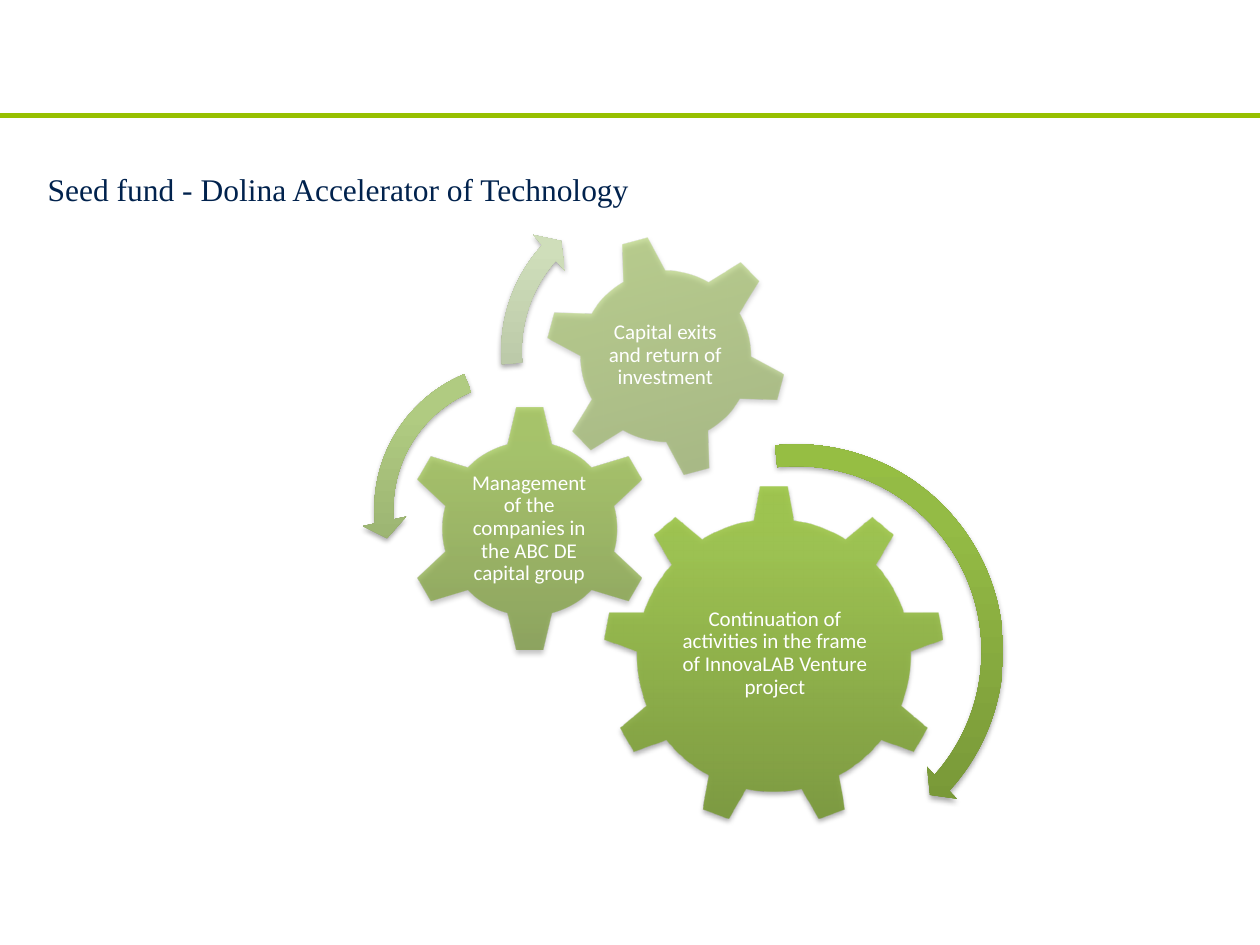
import pptx
import pptx.dml.color
import pptx.enum.shapes
import pptx.enum.text
import pptx.oxml
import pptx.oxml.ns
import pptx.util

Inches = pptx.util.Inches
Pt = pptx.util.Pt
SHAPE = pptx.enum.shapes.MSO_SHAPE
ALIGN = pptx.enum.text.PP_ALIGN
ANCHOR = pptx.enum.text.MSO_ANCHOR
NS = pptx.oxml.ns.nsdecls("a")


def rgb(value):
    return pptx.dml.color.RGBColor.from_string(value)


class Deck:
    TITLE = {"name": "Times New Roman", "size": Pt(18)}
    LABEL = {"name": "Calibri", "size": Pt(12)}
    NAVY, WHITE, GREEN = "01224D", "FFFFFF", "97C000"
    GEAR_COLORS = ("779737", "9BC348", "9DC746")

    def __init__(self, prs):
        self.s = prs.slides.add_slide(prs.slide_layouts[6])

    def rule(self, y):
        c = self.s.shapes.add_connector(
            pptx.enum.shapes.MSO_CONNECTOR.STRAIGHT, 0, Inches(y), Inches(10), Inches(y))
        c.line.color.rgb = rgb(self.GREEN)
        c.line.width = Pt(2.75)
        c._element.spPr.append(pptx.oxml.parse_xml(f"<a:effectLst {NS}/>"))

    def text(self, box, words, font, color, frame=None, para=None):
        tf = self.s.shapes.add_textbox(*map(Inches, box)).text_frame
        tf.word_wrap = True
        p = tf.paragraphs[0]
        r = p.add_run()
        r.text = words
        r.font.color.rgb = rgb(color)
        for target, values in ((tf, frame), (p, para), (r.font, font)):
            for key, value in (values or {}).items():
                setattr(target, key, value)

    def label(self, box, words):
        margins = {f"margin_{side}": Inches(0.02)
                   for side in ("left", "top", "right", "bottom")}
        self.text(box, words, self.LABEL, self.WHITE,
                  {"vertical_anchor": ANCHOR.MIDDLE, **margins},
                  {"alignment": ALIGN.CENTER, "line_spacing": 0.9})

    def shape(self, kind, x, y, size, colors, opacity=100, rotation=0, adj=()):
        sp = self.s.shapes.add_shape(
            kind, Inches(x), Inches(y), Inches(size), Inches(size))
        sp.rotation = rotation
        for i, value in enumerate(adj):
            sp.adjustments[i] = value
        sp.line.fill.background()
        sp.shadow.inherit = False
        spPr = sp._element.spPr

        # Vertical three-stop gradient
        stops = "".join(
            f'<a:gs pos="{pos * 1000}"><a:srgbClr val="{color}">'
            f'<a:alpha val="{opacity * 1000}"/></a:srgbClr></a:gs>'
            for pos, color in zip((0, 80, 100), colors))
        spPr.find(pptx.oxml.ns.qn("a:prstGeom")).addnext(pptx.oxml.parse_xml(
            f'<a:gradFill {NS} rotWithShape="1"><a:gsLst>{stops}</a:gsLst>'
            '<a:lin ang="16200000" scaled="0"/></a:gradFill>'))

        # Soft shadow below
        spPr.find(pptx.oxml.ns.qn("a:effectLst")).append(pptx.oxml.parse_xml(
            f'<a:outerShdw {NS} blurRad="{Pt(3.1)}" dist="{Pt(1.8)}" dir="5400000" '
            'rotWithShape="0"><a:srgbClr val="000000"><a:alpha val="35000"/>'
            '</a:srgbClr></a:outerShdw>'))

    def gear(self, kind, x, y, size, opacity, box, words, rotation=0):
        self.shape(kind, x, y, size, self.GEAR_COLORS, opacity, rotation)
        self.label(box, words)


def main():
    prs = pptx.Presentation()
    prs.slide_width, prs.slide_height = Inches(10), Inches(7.5)
    deck = Deck(prs)

    # Header
    deck.rule(0.92)
    deck.text((0.28, 1.15, 9.45, 0.5), "Seed fund - Dolina Accelerator of Technology",
              deck.TITLE, deck.NAVY, para={"line_spacing": 1.5})

    # Gears with their labels
    deck.gear(SHAPE.GEAR_9, 4.79, 3.85, 2.7, 90, (5.34, 4.49, 1.62, 1.39),
              "Continuation of activities in the frame of InnovaLAB Venture project")
    deck.gear(SHAPE.GEAR_6, 3.22, 3.21, 1.97, 70, (3.71, 3.71, 0.98, 0.97),
              "Management of the companies in the ABC DE capital group")
    deck.gear(SHAPE.GEAR_6, 4.32, 1.86, 1.93, 50, (4.74, 2.28, 1.08, 1.08),
              "Capital exits and return of investment", rotation=345)

    # Arrows showing the turn of each gear
    deck.shape(SHAPE.CIRCULAR_ARROW, 4.59, 3.44, 3.46, ("729035", "94BB45", "96BE43"),
               adj=(0.05, 2.99, 25.23, 158.47, 0.05))
    deck.shape(SHAPE.LEFT_CIRCULAR_ARROW, 2.87, 2.78, 2.52, ("879C63", "B0CB81", "B1CD80"),
               adj=(0.06, 4.3, 104.89, 148.38, 0.07))
    deck.shape(SHAPE.CIRCULAR_ARROW, 3.87, 1.43, 2.71, ("A0AB8F", "CFDEBA", "D0E0BA"),
               adj=(0.06, 3.94, 133.14, 105.08, 0.07))

    prs.save("out.pptx")


if __name__ == "__main__":
    main()
